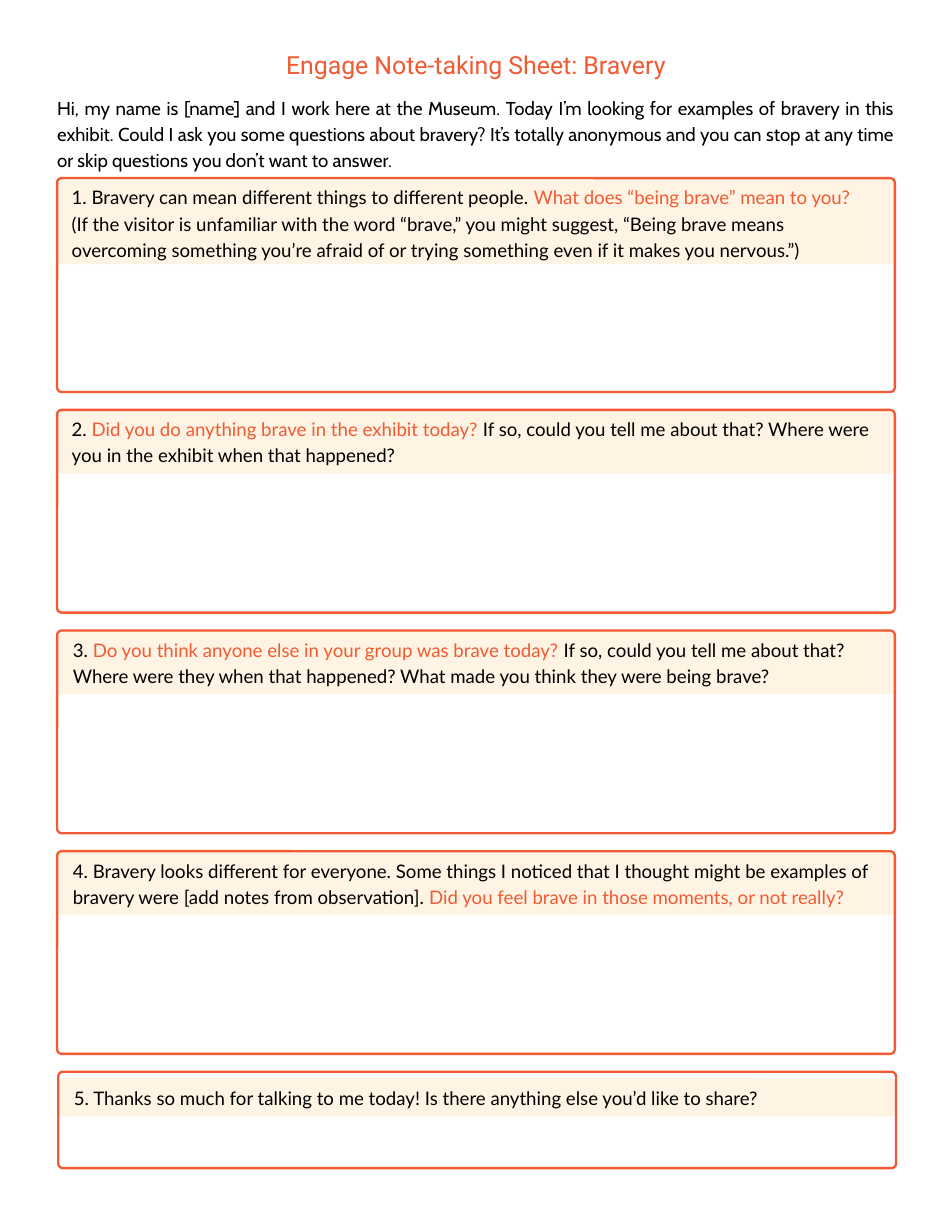
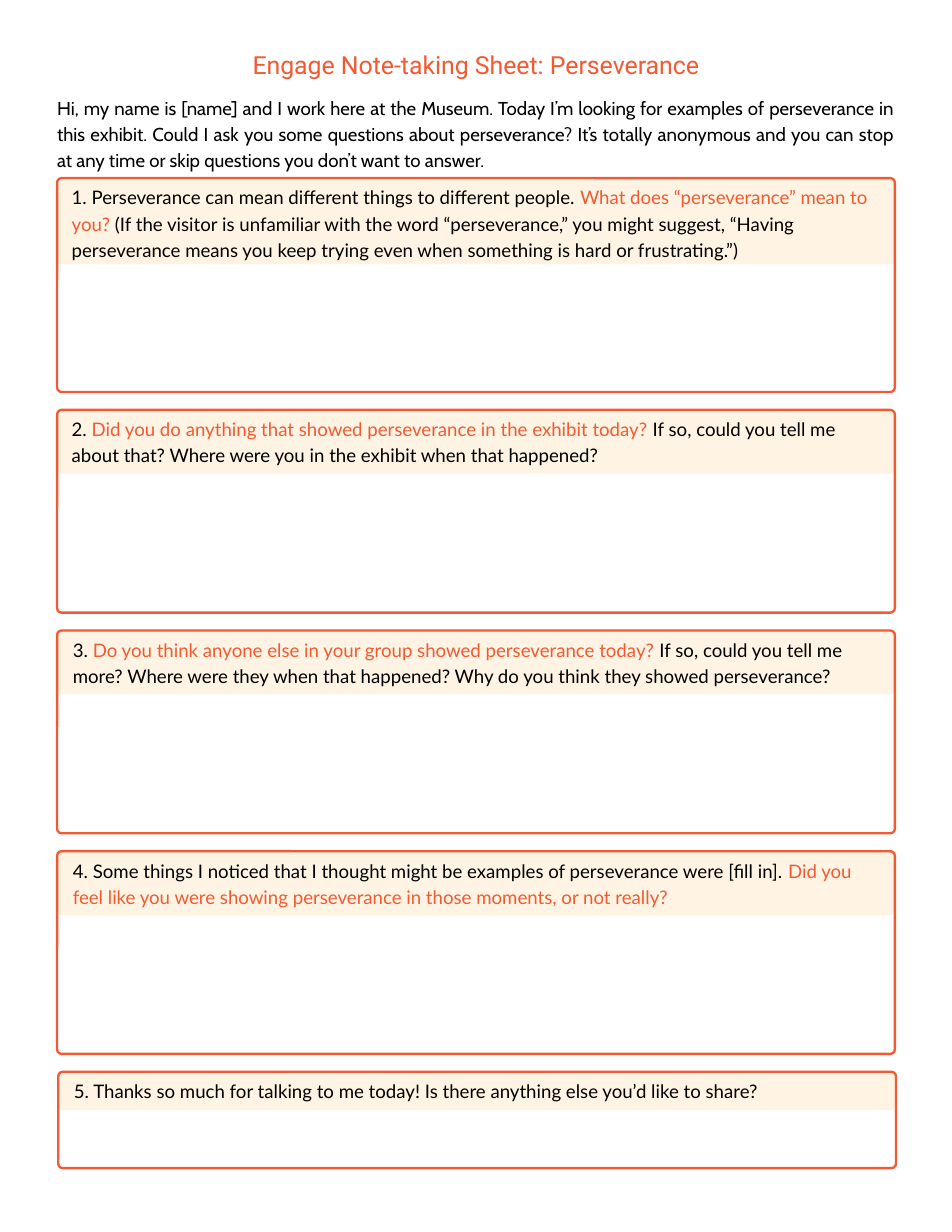
from pptx import Presentation
from pptx.dml.color import RGBColor
from pptx.enum.shapes import MSO_SHAPE
from pptx.enum.text import PP_ALIGN
from pptx.util import Emu, Pt

# Shared style: 100 px to the inch
PX = 9144
PAGE_WIDTH, PAGE_HEIGHT = 850, 1100
LEFT, WIDTH = 51, 748
TEXT_WIDTH, TEXT_DROP = 721, 4
CORNER = 4
FIRST_TOP, GAP = 159, 16
ORANGE, CREAM, BLACK = "F15A32", "FFF4E3", "000000"

TITLE = {"font": "Roboto", "size": 16, "color": ORANGE,
         "alignment": PP_ALIGN.CENTER, "line_spacing": Pt(22.4)}
INTRO = {"font": "Cabin", "size": 12, "color": BLACK,
         "alignment": PP_ALIGN.JUSTIFY, "line_spacing": Pt(16.8)}
QUESTION = {"font": "Lato", "size": 12, "color": BLACK,
            "alignment": PP_ALIGN.LEFT, "line_spacing": Pt(16.8)}

# Cards, top to bottom: left edge, height, band height, text inset, text height
CARDS = [
    (LEFT, 191, 77, 13, 68),
    (LEFT, 181, 57, 13, 45),
    (LEFT, 181, 57, 14, 45),
    (LEFT, 181, 57, 14, 45),
    (LEFT + 1, 86, 34, 14, 22),
]

CLOSING = ("5. Thanks so much for talking to me today! Is there anything else "
           "you’d like to share?")

# Wording: text between bars is set in orange
SHEETS = [
    {
        "title": "Engage Note-taking Sheet: Bravery",
        "intro": "Hi, my name is [name] and I work here at the Museum. Today I’m looking "
                 "for examples of bravery in this exhibit. Could I ask you some questions "
                 "about bravery? It’s totally anonymous and you can stop at any time or "
                 "skip questions you don’t want to answer.",
        "questions": [
            "1. Bravery can mean different things to different people. "
            "|What does “being brave” mean to you?|\n"
            "(If the visitor is unfamiliar with the word “brave,” you might suggest, "
            "“Being brave means overcoming something you’re afraid of or trying "
            "something even if it makes you nervous.”)",
            "2. |Did you do anything brave in the exhibit today?| If so, could you tell "
            "me about that? Where were you in the exhibit when that happened?",
            "3. |Do you think anyone else in your group was brave today?| If so, could "
            "you tell me about that? Where were they when that happened? What made you "
            "think they were being brave?",
            "4. Bravery looks different for everyone. Some things I noticed that I "
            "thought might be examples of bravery were [add notes from observation]. "
            "|Did you feel brave in those moments, or not really?|",
            CLOSING,
        ],
        "closing_drop": 6,
    },
    {
        "title": "Engage Note-taking Sheet: Perseverance",
        "intro": "Hi, my name is [name] and I work here at the Museum. Today I’m looking "
                 "for examples of perseverance in this exhibit. Could I ask you some "
                 "questions about perseverance? It’s totally anonymous and you can stop "
                 "at any time or skip questions you don’t want to answer.",
        "questions": [
            "1. Perseverance can mean different things to different people. "
            "|What does “perseverance” mean to you?| (If the visitor is unfamiliar with "
            "the word “perseverance,” you might suggest, “Having perseverance means you "
            "keep trying even when something is hard or frustrating.”)",
            "2. |Did you do anything that showed perseverance in the exhibit today?| If "
            "so, could you tell me about that? Where were you in the exhibit when that "
            "happened?",
            "3. |Do you think anyone else in your group showed perseverance today?| If "
            "so, could you tell me more? Where were they when that happened? Why do you "
            "think they showed perseverance?",
            "4. Some things I noticed that I thought might be examples of perseverance "
            "were [fill in]. |Did you feel like you were showing perseverance in those "
            "moments, or not really?|",
            CLOSING,
        ],
        "closing_drop": 0,
    },
]


def rgb(value):
    return RGBColor.from_string(value)


def set_all(target, values):
    for name, value in values.items():
        setattr(target, name, value)


class Sheet:
    """Holds the deck and the current page, and draws each kind of element."""

    def __init__(self, deck):
        self.deck = deck
        self.page = None

    def new_page(self):
        self.page = self.deck.slides.add_slide(self.deck.slide_layouts[6])

    def panel(self, left, top, width, height, fill=None, line=None):
        frame = [Emu(length * PX) for length in (left, top, width, height)]
        panel = self.page.shapes.add_shape(MSO_SHAPE.ROUNDED_RECTANGLE, *frame)
        panel.adjustments[0] = CORNER / min(width, height)
        panel.shadow.inherit = False
        if fill:
            panel.fill.solid()
            panel.fill.fore_color.rgb = rgb(fill)
        else:
            panel.fill.background()
        if line:
            panel.line.color.rgb = rgb(line)
            panel.line.width = Pt(1.5)
        else:
            panel.line.fill.background()

    def text(self, left, top, width, height, words, style):
        frame = [Emu(length * PX) for length in (left, top, width, height)]
        box = self.page.shapes.add_textbox(*frame).text_frame
        set_all(box, {"word_wrap": True, "margin_left": 0, "margin_right": 0,
                      "margin_top": 0, "margin_bottom": 0})
        for number, line in enumerate(words.split("\n")):
            para = box.add_paragraph() if number else box.paragraphs[0]
            set_all(para, {name: style[name] for name in ("alignment", "line_spacing")})
            for index, part in enumerate(line.split("|")):
                if part:
                    span = para.add_run()
                    span.text = part
                    set_all(span.font, {"name": style["font"], "size": Pt(style["size"])})
                    span.font.color.rgb = rgb(ORANGE if index % 2 else style["color"])

    def card(self, top, card, words, drop):
        left, height, band_height, inset, text_height = card
        self.panel(left, top + drop, WIDTH, band_height, fill=CREAM)
        self.panel(left, top, WIDTH, height, line=ORANGE)
        self.text(left + inset, top + drop + TEXT_DROP, TEXT_WIDTH, text_height,
                  words, QUESTION)


def main():
    deck = Presentation()
    set_all(deck, {"slide_width": Emu(PAGE_WIDTH * PX),
                   "slide_height": Emu(PAGE_HEIGHT * PX)})
    sheet = Sheet(deck)
    for content in SHEETS:
        sheet.new_page()
        # Heading and introduction
        sheet.text(LEFT, 83, WIDTH, 90, content["intro"], INTRO)
        sheet.text(LEFT, 40, WIDTH, 29, content["title"], TITLE)
        # Question cards, stacked with equal gaps
        top = FIRST_TOP
        for card, words in zip(CARDS, content["questions"]):
            drop = content["closing_drop"] if words == CLOSING else 0
            sheet.card(top, card, words, drop)
            top += card[1] + GAP
    deck.save("out.pptx")


if __name__ == "__main__":
    main()
